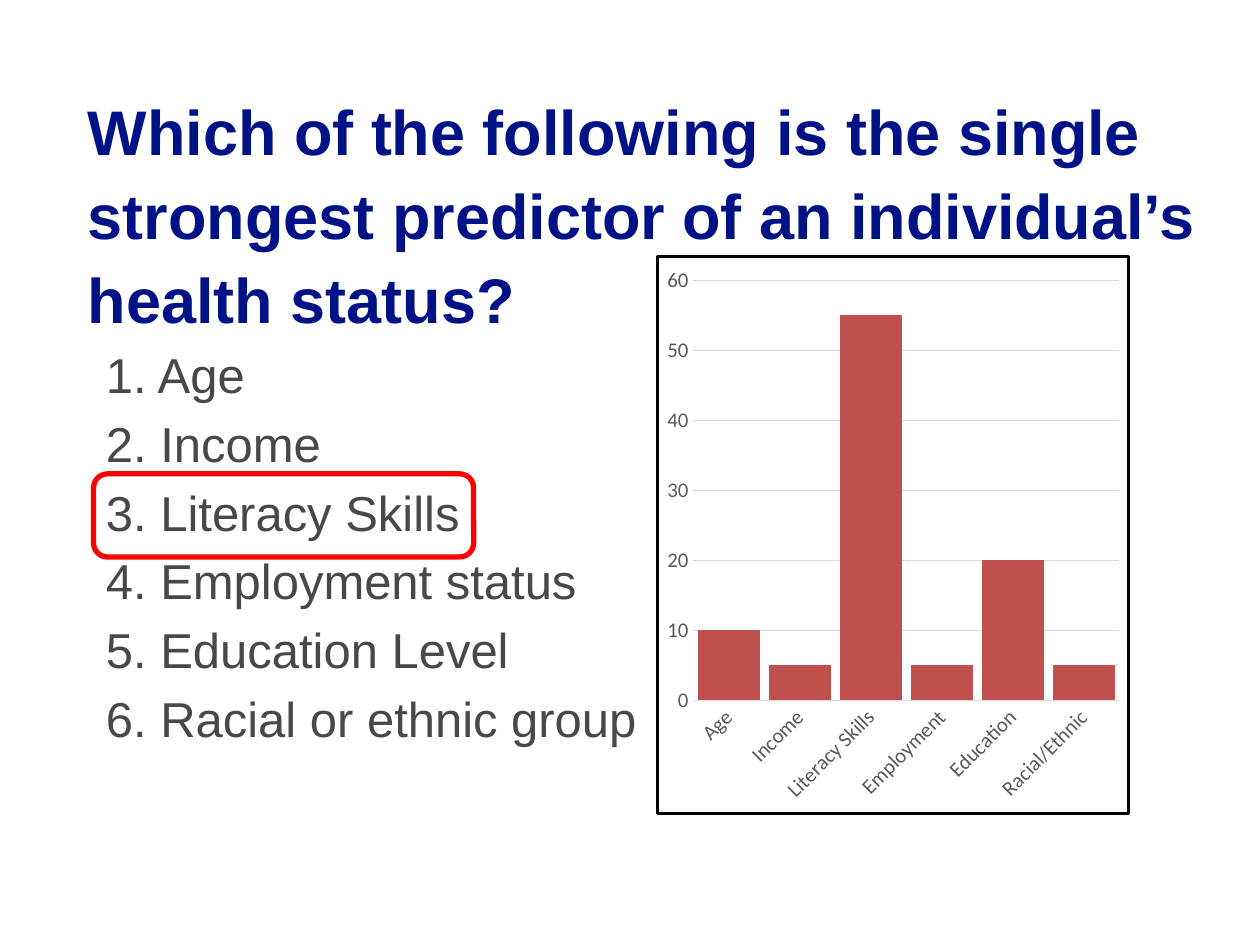
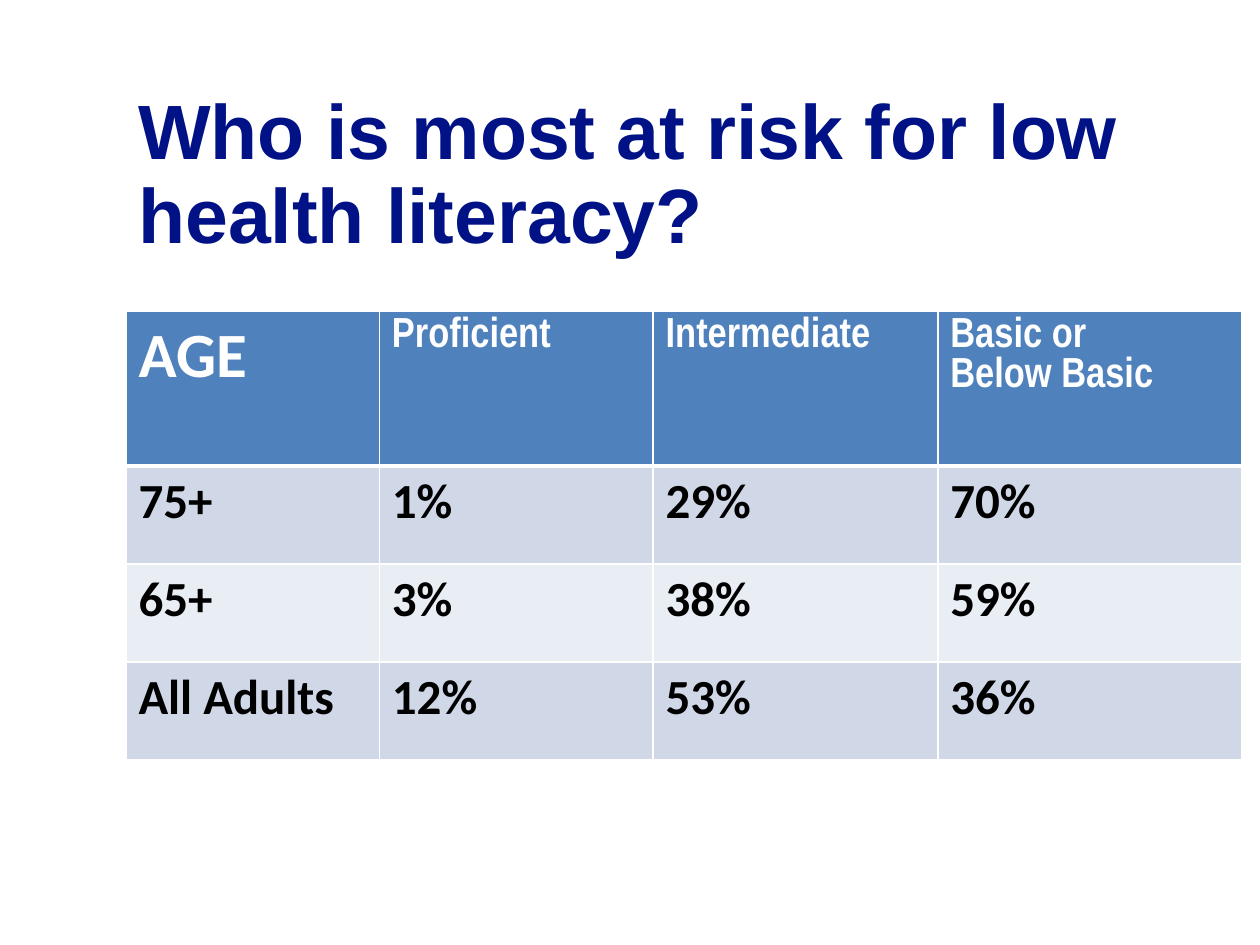
from lxml.etree import SubElement, fromstring
from pptx import Presentation
from pptx.chart.data import CategoryChartData
from pptx.dml.color import RGBColor
from pptx.enum.chart import XL_CHART_TYPE as ChartType, XL_TICK_MARK as TickMark
from pptx.enum.shapes import MSO_SHAPE as Shape
from pptx.oxml.ns import nsdecls, qn
from pptx.util import Pt

NAVY, GRAY, RED, WHITE, BLACK = "001286", "484848", "FF0000", "FFFFFF", "000000"
BAR, AXIS_TEXT, GRID = "C0504D", "595959", "D9D9D9"
HEADER, BAND_DARK, BAND_LIGHT = "4F81BD", "D0D8E8", "E9EDF4"


def rgb(value):
    return RGBColor.from_string(value)


def add_text(slide, box, lines, size, color, bold=False, line_spacing=None, gap=0):
    frame = slide.shapes.add_textbox(*[Pt(v) for v in box]).text_frame
    frame.word_wrap = True
    frame.text = "\n".join(lines)
    for index, paragraph in enumerate(frame.paragraphs):
        if line_spacing:
            paragraph.line_spacing = Pt(line_spacing)
        if index:
            paragraph.space_before = Pt(gap)
        font = paragraph.runs[0].font
        font.name, font.size, font.bold = "Arial", Pt(size), bold
        font.color.rgb = rgb(color)


deck = Presentation()
deck.slide_width, deck.slide_height = Pt(720), Pt(540)
blank = deck.slide_layouts[6]
title_style = dict(color=NAVY, bold=True, line_spacing=48)

# Slide 1: question and answers
predictors = deck.slides.add_slide(blank)
add_text(predictors, (43.2, 44.5, 648, 120),
         ["Which of the following is the single strongest predictor of an individual’s health status?"],
         size=36, **title_style)
answers = ["1. Age", "2. Income", "3. Literacy Skills", "4. Employment status",
           "5. Education Level", "6. Racial or ethnic group"]
add_text(predictors, (53.5, 193.6, 377, 277), answers, size=28, color=GRAY, gap=5.6)

# Frame around the right answer
highlight = predictors.shapes.add_shape(
    Shape.ROUNDED_RECTANGLE, Pt(53.5), Pt(270.8), Pt(217.2), Pt(47.5))
highlight.shadow.inherit = False
highlight.fill.background()
highlight.line.color.rgb = rgb(RED)
highlight.line.width = Pt(3)

# Predictor chart
strengths = CategoryChartData()
strengths.categories = ["Age", "Income", "Literacy Skills", "Employment", "Education", "Racial/Ethnic"]
strengths.add_series("Series 1", [10, 5, 55, 5, 20, 5])
chart = predictors.shapes.add_chart(
    ChartType.COLUMN_CLUSTERED, Pt(375), Pt(145.8), Pt(270.8), Pt(320), strengths).chart
chart.has_legend = chart.has_title = False
chart.font.name, chart.font.size = "Calibri", Pt(10)
chart.font.color.rgb = rgb(BLACK)

bars = chart.plots[0]
bars.vary_by_categories = False
bars.gap_width, bars.overlap = 15, -27
bars.series[0].format.fill.solid()
bars.series[0].format.fill.fore_color.rgb = rgb(BAR)

categories, scale = chart.category_axis, chart.value_axis
for axis in (categories, scale):
    axis.major_tick_mark = axis.minor_tick_mark = TickMark.NONE
    font = axis.tick_labels.font
    font.name, font.size = "Calibri", Pt(12)
    font.color.rgb = rgb(AXIS_TEXT)
scale.minimum_scale, scale.maximum_scale, scale.major_unit = 0, 60, 10
scale.has_major_gridlines = True
scale.format.line.fill.background()
for line in (categories.format.line, scale.major_gridlines.format.line):
    line.color.rgb = rgb(GRID)
    line.width = Pt(0.75)

# Slanted category labels and the chart border
categories._element.find(qn("c:txPr")).find(qn("a:bodyPr")).set("rot", "-2700000")
border = fromstring(
    f'<c:spPr {nsdecls("c", "a")}><a:noFill/><a:ln w="{Pt(1.75)}"><a:solidFill>'
    f'<a:srgbClr val="{BLACK}"/></a:solidFill></a:ln></c:spPr>')
chart._chartSpace.find(qn("c:chart")).addnext(border)

# Slide 2: literacy by age
risk = deck.slides.add_slide(blank)
add_text(risk, (72, 48.4, 576, 74), ["Who is most at risk for low health literacy?"],
         size=44, **title_style)
levels_by_age = [
    ["AGE", "Proficient", "Intermediate", "Basic or\nBelow Basic"],
    ["75+", "1%", "29%", "70%"],
    ["65+", "3%", "38%", "59%"],
    ["All Adults", "12%", "53%", "36%"],
]
widths = [144.8, 156.4, 162.7, 173.5]
heights = [88.5, 56, 56, 56]
table = risk.shapes.add_table(4, 4, Pt(72), Pt(177.7), Pt(sum(widths)), Pt(sum(heights))).table
for column, width in zip(table.columns, widths):
    column.width = Pt(width)
for row, height in zip(table.rows, heights):
    row.height = Pt(height)

for r, texts in enumerate(levels_by_age):
    fill = HEADER if r == 0 else (BAND_DARK if r % 2 else BAND_LIGHT)
    for c, text in enumerate(texts):
        cell = table.cell(r, c)
        cell.text = text
        # White rules, thicker under the header
        properties = cell._tc.get_or_add_tcPr()
        for side in "LRTB":
            thick = (r, side) in ((0, "B"), (1, "T"))
            rule = SubElement(properties, qn(f"a:ln{side}"), w=str(Pt(3 if thick else 1)))
            SubElement(SubElement(rule, qn("a:solidFill")), qn("a:srgbClr"), val=WHITE)
        cell.fill.solid()
        cell.fill.fore_color.rgb = rgb(fill)
        for paragraph in cell.text_frame.paragraphs:
            font = paragraph.runs[0].font
            font.name = "Arial Narrow" if r == 0 and c else "Calibri"
            font.size = Pt(28 if r else 24 if c else 36)
            font.bold = True
            font.color.rgb = rgb(BLACK if r else WHITE)

deck.save("out.pptx")
